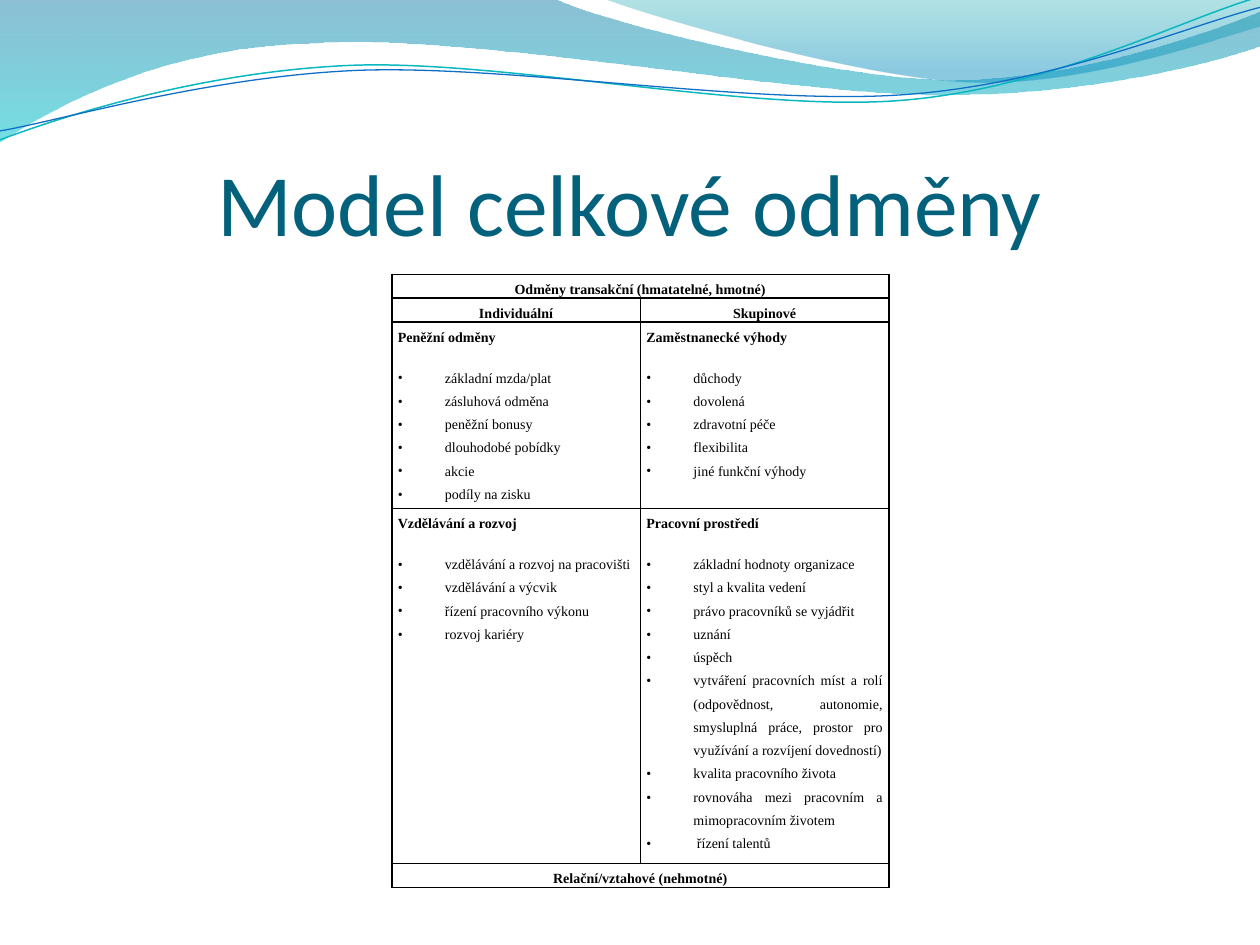
from lxml import etree
from pptx import Presentation
from pptx import util as u
from pptx.dml.color import RGBColor
from pptx.enum import text
from pptx.oxml.ns import qn

TITLE = {"name": "Calibri", "size": u.Pt(50), "bold": False}
HEADING = {"name": "Times New Roman", "size": u.Pt(8), "bold": True}
ITEM = {**HEADING, "bold": False}

# Waves in cm: a start point, then straight steps (one point) and curves (three points).
BANDS = [
    ([[(0, 0)],
      [(11.18, -0.03)],
      [(12.09, 0.43), (16.87, 1.6), (19.25, 1.6)],
      [(21.67, 1.6), (24.33, 0.66), (25.4, 0.23)],
      [(25.43, 0.91)],
      [(24.97, 1.12), (22.1, 1.93), (18.95, 1.91)],
      [(15.8, 1.91), (9.7, 0.71), (6.53, 0.86)],
      [(3.28, 0.91), (1.17, 2.11), (-0.03, 2.87)]],
     [(0, "0074A1", 45), (1, "00C6CF", 55)]),
    ([[(12.17, -0.03)],
      [(12.93, 0.28), (17.32, 1.57), (19.53, 1.65)],
      [(21.74, 1.75), (24.41, 0.81), (25.4, 0.53)],
      [(25.4, 0)]],
     [(0, "00A1A9", 30), (0.8, "008BBF", 45)]),
]
STRANDS = [
    ([[(0, 2.82)],
      [(1.22, 2.36), (4.01, 1.45), (7.04, 1.32)],
      [(10.03, 1.19), (15.06, 2.26), (18.11, 2.03)],
      [(21.16, 1.8), (23.83, 0.38), (25.35, -0.05)]], "0AB8BF", 0.85),
    ([[(0, 2.64)],
      [(1.19, 2.44), (4.17, 1.55), (7.19, 1.42)],
      [(10.24, 1.3), (15.16, 2.13), (18.21, 1.91)],
      [(21.23, 1.7), (23.9, 0.53), (25.4, 0.15)]], "0F6FC6", 0.75),
]

COLUMN_WIDTH = 5.01
ROW_HEIGHTS = [0.48, 0.48, 3.76, 7.16, 0.48]
BANNERS = {0: "Odměny transakční (hmatatelné, hmotné)",
           4: "Relační/vztahové (nehmotné)"}
COLUMN_HEADS = ["Individuální", "Skupinové"]
REWARDS = {
    (2, 0): ("Peněžní odměny", [
        "základní mzda/plat", "zásluhová odměna", "peněžní bonusy",
        "dlouhodobé pobídky", "akcie", "podíly na zisku"]),
    (2, 1): ("Zaměstnanecké výhody", [
        "důchody", "dovolená", "zdravotní péče", "flexibilita", "jiné funkční výhody"]),
    (3, 0): ("Vzdělávání a rozvoj", [
        "vzdělávání a rozvoj na pracovišti", "vzdělávání a výcvik",
        "řízení pracovního výkonu", "rozvoj kariéry"]),
    (3, 1): ("Pracovní prostředí", [
        "základní hodnoty organizace", "styl a kvalita vedení",
        "právo pracovníků se vyjádřit", "uznání", "úspěch",
        "vytváření pracovních míst a rolí (odpovědnost, autonomie, smysluplná práce, "
        "prostor pro využívání a rozvíjení dovedností)",
        "kvalita pracovního života", "rovnováha mezi pracovním a mimopracovním životem",
        " řízení talentů"]),
}


def colour(value):
    return RGBColor.from_string(value)


def apply(target, values):
    for name, value in values.items():
        setattr(target, name, value)


def add_child(parent, tag, **attributes):
    child = etree.SubElement(parent, qn(tag))
    for name, value in attributes.items():
        child.set(name, str(value))
    return child


def add_outline(page, steps, close):
    """Build a freeform through all points, then join each group of three into a curve."""
    points = [(u.Cm(x), u.Cm(y)) for step in steps for x, y in step]
    builder = page.shapes.build_freeform(*points[0])
    builder.add_line_segments(points[1:], close=close)
    outline = builder.convert_to_shape()
    outline.shadow.inherit = False
    lines = outline._element.spPr.iter(qn("a:lnTo"))
    segments = iter(list(lines))
    for step in steps[1:]:
        group = [next(segments) for _ in step]
        if len(group) == 3:
            curve = etree.Element(qn("a:cubicBezTo"))
            group[0].addprevious(curve)
            for segment in group:
                curve.append(segment[0])
                segment.getparent().remove(segment)
    return outline


def add_band(page, steps, stops):
    band = add_outline(page, steps, close=True)
    band.line.fill.background()
    band.fill.gradient()
    band.fill.gradient_angle = 270
    for stop, (position, shade, _) in zip(band.fill.gradient_stops, stops):
        stop.position = position
        stop.color.rgb = colour(shade)
    shades = band._element.spPr.iter(qn("a:srgbClr"))
    for shade, (_, _, opacity) in zip(shades, stops):
        add_child(shade, "a:alpha", val=opacity * 1000)


def add_strand(page, steps, shade, width):
    strand = add_outline(page, steps, close=False)
    strand.fill.background()
    strand.line.color.rgb = colour(shade)
    strand.line.width = u.Pt(width)


def write(para, words, look, shade="000000", **layout):
    apply(para, layout)
    span = para.add_run()
    span.text = words
    apply(span.font, look)
    span.font.color.rgb = colour(shade)


def format_title(page, words):
    title = page.shapes.title
    apply(title, {"left": u.Cm(1.27), "top": u.Cm(1.95),
                  "width": u.Cm(22.86), "height": u.Cm(3.17)})
    apply(title.text_frame, {
        "margin_left": 0, "margin_right": 0, "margin_top": u.Cm(0.13), "margin_bottom": 0,
        "vertical_anchor": text.MSO_ANCHOR.BOTTOM, "auto_size": text.MSO_AUTO_SIZE.NONE})
    write(title.text_frame.paragraphs[0], words, TITLE, "04617B",
          alignment=text.PP_ALIGN.CENTER)
    page.shapes._spTree.append(title._element)  # in front of the waves


def format_cell(cell):
    apply(cell, {"margin_left": u.Cm(0.12), "margin_right": u.Cm(0.12),
                 "margin_top": 0, "margin_bottom": 0})
    properties = cell._tc.get_or_add_tcPr()
    for side in "LRTB":
        border = add_child(properties, f"a:ln{side}", w=u.Pt(1))
        add_child(add_child(border, "a:solidFill"), "a:srgbClr", val="000000")
    cell.fill.background()


def write_heading(cell, words, alignment=text.PP_ALIGN.CENTER):
    write(cell.text_frame.paragraphs[0], words, HEADING,
          alignment=alignment, line_spacing=1.5, space_after=u.Pt(10))


def add_item(cell, words):
    para = cell.text_frame.add_paragraph()
    properties = para._p.get_or_add_pPr()
    properties.set("marL", str(u.Cm(0.95)))
    properties.set("indent", str(-u.Cm(0.95)))
    add_child(properties, "a:buFont", typeface=ITEM["name"])
    add_child(properties, "a:buChar", char="•")
    add_child(add_child(properties, "a:tabLst"), "a:tab", pos=u.Cm(1.27), algn="l")
    write(para, words, ITEM, alignment=text.PP_ALIGN.JUSTIFY, line_spacing=1.5)


def add_reward_table(page):
    columns = len(COLUMN_HEADS)
    table = page.shapes.add_table(
        len(ROW_HEIGHTS), columns, u.Cm(7.9), u.Cm(5.53),
        u.Cm(COLUMN_WIDTH * columns), u.Cm(sum(ROW_HEIGHTS))).table
    apply(table, {"first_row": False, "horz_banding": False})
    for column in table.columns:
        column.width = u.Cm(COLUMN_WIDTH)
    for row, height in zip(table.rows, ROW_HEIGHTS):
        row.height = u.Cm(height)
    for cell in table.iter_cells():
        format_cell(cell)
    for row, words in BANNERS.items():
        table.cell(row, 0).merge(table.cell(row, columns - 1))
        write_heading(table.cell(row, 0), words)
    for column, words in enumerate(COLUMN_HEADS):
        write_heading(table.cell(1, column), words)
    for place, (heading, items) in REWARDS.items():
        cell = table.cell(*place)
        write_heading(cell, heading, text.PP_ALIGN.JUSTIFY)
        for words in items:
            add_item(cell, words)


def main():
    deck = Presentation()
    apply(deck, {"slide_width": u.Cm(25.4), "slide_height": u.Cm(19.05)})
    page = deck.slides.add_slide(deck.slide_layouts[5])
    for band in BANDS:
        add_band(page, *band)
    for strand in STRANDS:
        add_strand(page, *strand)
    format_title(page, "Model celkové odměny")
    add_reward_table(page)
    deck.save("out.pptx")


if __name__ == "__main__":
    main()
